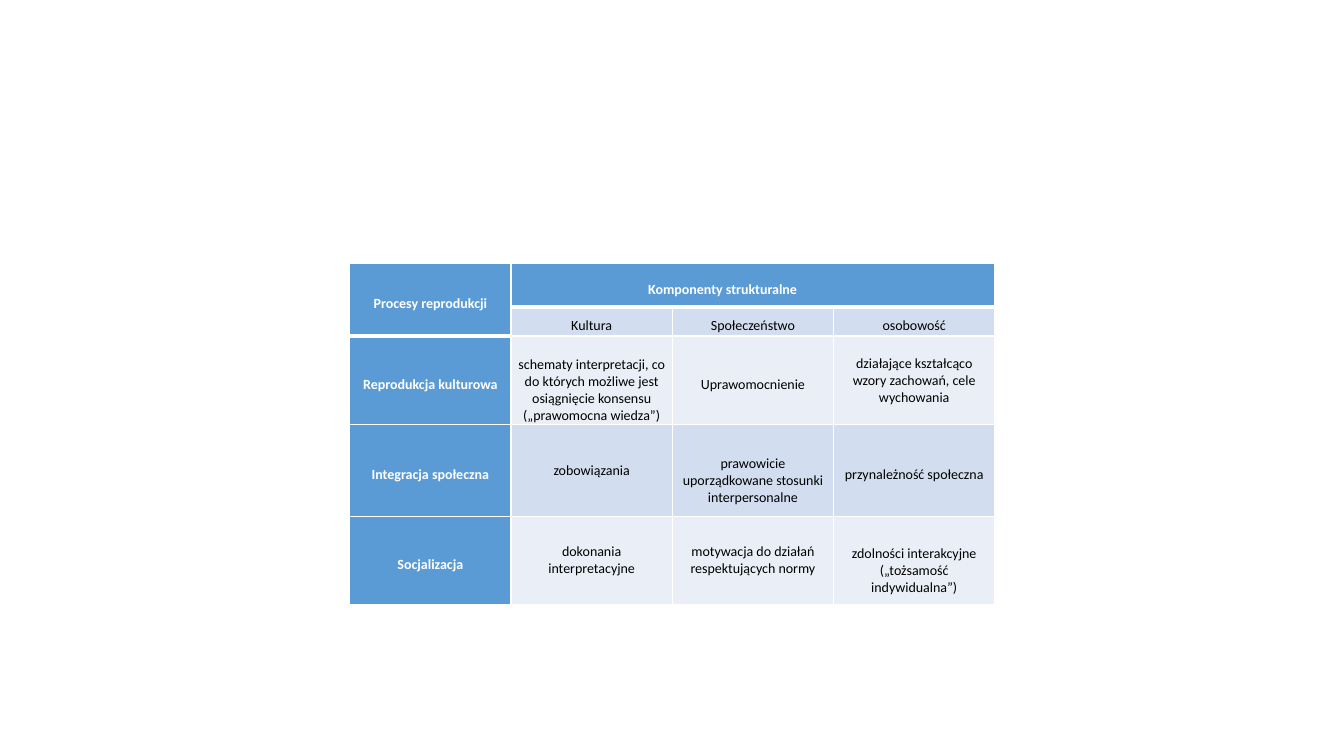
from dataclasses import dataclass

from lxml.etree import SubElement
from pptx import Presentation
from pptx.dml.color import RGBColor as Rgb
from pptx.enum.text import MSO_ANCHOR as Anchor, PP_ALIGN as Align
from pptx.oxml.ns import qn
from pptx.util import Pt


@dataclass(frozen=True)
class Theme:
    font: str = "Calibri"
    size: float = 10
    header: str = "5B9BD5"
    bands: tuple = ("EAEFF7", "D2DEEF")
    light: str = "FFFFFF"
    dark: str = "000000"
    thin: float = 1
    thick: float = 3


@dataclass(frozen=True)
class Entry:
    text: str
    line_spacing: float = 1.5
    top: float = 0
    left: float = 5
    align: Align = Align.CENTER


THEME = Theme()
COLUMN_WIDTH = 115.2
ROW_HEIGHTS = (31, 20.9, 61.2, 65.8, 63)


def wrapped(text, top=0):
    """Single-spaced entry, optionally pushed down in its cell."""
    return Entry(text, line_spacing=1, top=top)


LOWERED = 14.6
ENTRIES = (
    (Entry("Procesy reprodukcji"),
     Entry("Komponenty strukturalne", left=98, align=Align.LEFT), None, None),
    (None, Entry("Kultura"), Entry("Społeczeństwo"), Entry("osobowość")),
    (Entry("Reprodukcja kulturowa"),
     wrapped("schematy interpretacji, co do których możliwe jest osiągnięcie "
             "konsensu („prawomocna wiedza”)", LOWERED),
     Entry("Uprawomocnienie"),
     wrapped("działające kształcąco wzory zachowań, cele wychowania")),
    (Entry("Integracja społeczna"),
     wrapped("zobowiązania"),
     wrapped("prawowicie uporządkowane stosunki interpersonalne", LOWERED),
     Entry("przynależność społeczna")),
    (Entry("Socjalizacja"),
     wrapped("dokonania interpretacyjne"),
     wrapped("motywacja do działań respektujących normy"),
     wrapped("zdolności interakcyjne („tożsamość indywidualna”)", LOWERED)),
)


def draw_borders(cell, bottom):
    properties = cell._tc.get_or_add_tcPr()
    widths = {"lnL": THEME.thin, "lnR": THEME.thin, "lnT": THEME.thin, "lnB": bottom}
    for side, width in widths.items():
        border = SubElement(properties, qn(f"a:{side}"), w=str(Pt(width)))
        fill = SubElement(border, qn("a:solidFill"))
        SubElement(fill, qn("a:srgbClr"), val=THEME.light)


def paint_cell(cell, color, bottom):
    draw_borders(cell, bottom)
    cell.fill.solid()
    cell.fill.fore_color.rgb = Rgb.from_string(color)


def write_entry(cell, entry, is_header):
    cell.vertical_anchor = Anchor.MIDDLE
    cell.margin_left, cell.margin_right = Pt(entry.left), Pt(5)
    cell.margin_top, cell.margin_bottom = Pt(entry.top), Pt(0)
    cell.text_frame.text = entry.text
    paragraph = cell.text_frame.paragraphs[0]
    paragraph.alignment = entry.align
    paragraph.line_spacing = entry.line_spacing
    font = paragraph.runs[0].font
    font.name, font.size, font.bold = THEME.font, Pt(THEME.size), is_header
    font.color.rgb = Rgb.from_string(THEME.light if is_header else THEME.dark)


def add_reproduction_table(slide, left, top):
    column_count = len(ENTRIES[0])
    table = slide.shapes.add_table(
        len(ENTRIES), column_count, Pt(left), Pt(top),
        Pt(COLUMN_WIDTH * column_count), Pt(sum(ROW_HEIGHTS))).table
    table.first_row = table.horz_banding = False
    for column in table.columns:
        column.width = Pt(COLUMN_WIDTH)
    for row, height in zip(table.rows, ROW_HEIGHTS):
        row.height = Pt(height)

    # Heading spans
    table.cell(0, 0).merge(table.cell(1, 0))
    table.cell(0, 1).merge(table.cell(0, column_count - 1))

    # Headings and banded body
    for r, entries in enumerate(ENTRIES):
        for c, entry in enumerate(entries):
            cell = table.cell(r, c)
            is_header = r == 0 or c == 0
            above_body = r == 0 or (r, c) == (1, 0)
            paint_cell(cell, THEME.header if is_header else THEME.bands[r % 2],
                       THEME.thick if above_body else THEME.thin)
            if entry:
                write_entry(cell, entry, is_header)


def main():
    deck = Presentation()
    deck.slide_width, deck.slide_height = Pt(960), Pt(540)
    blank_layout = deck.slide_layouts[6]
    slide = deck.slides.add_slide(blank_layout)
    add_reproduction_table(slide, left=249.8, top=188.2)
    deck.save("out.pptx")


if __name__ == "__main__":
    main()
